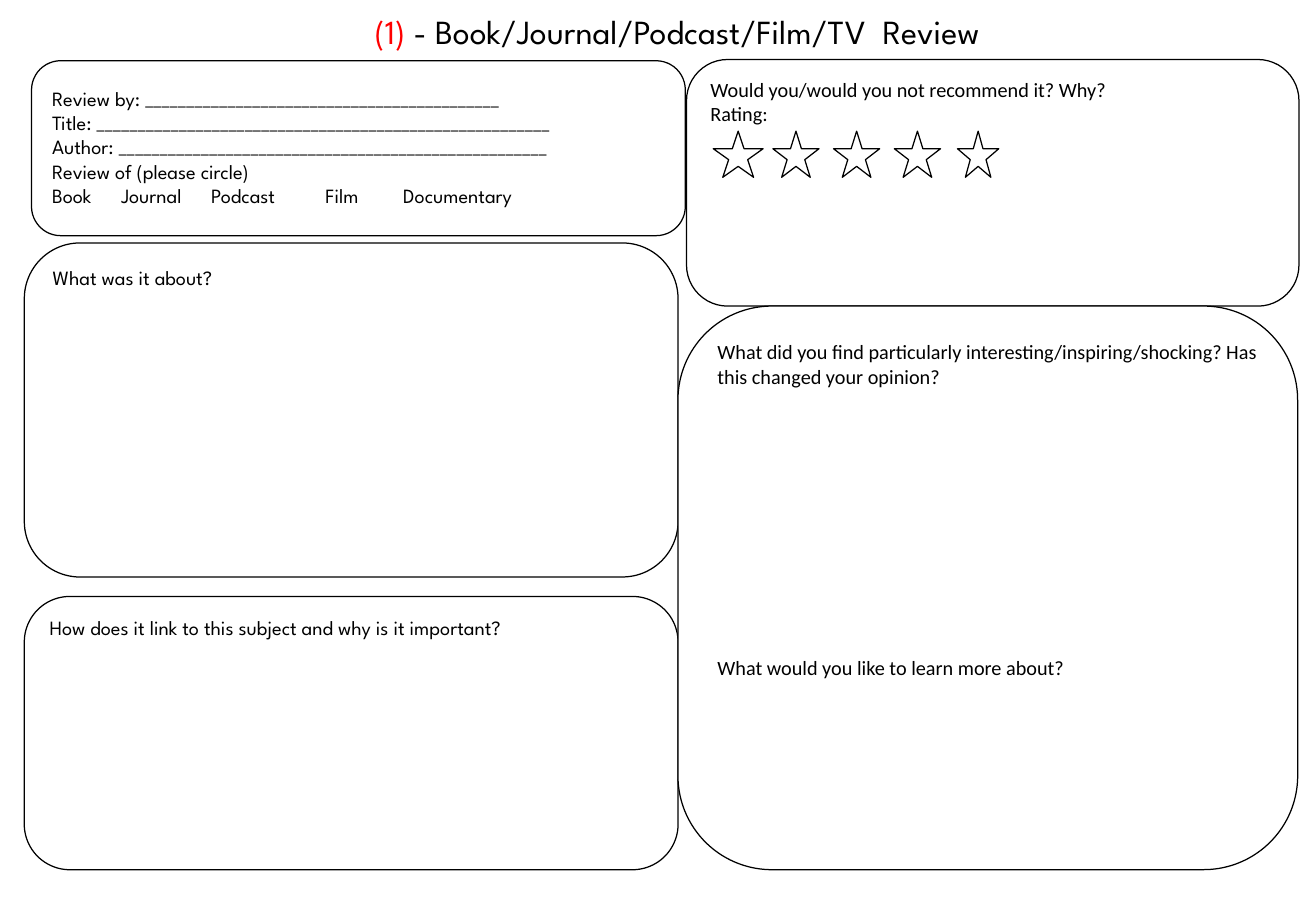
from lxml import etree
from pptx import Presentation
from pptx.dml.color import RGBColor
from pptx.enum.shapes import MSO_SHAPE
from pptx.enum.text import MSO_ANCHOR, MSO_AUTO_SIZE, PP_ALIGN
from pptx.oxml.ns import qn
from pptx.util import Inches, Pt

PANEL = MSO_SHAPE.FLOWCHART_ALTERNATE_PROCESS
STAR = MSO_SHAPE.STAR_5_POINT
TOP = MSO_ANCHOR.TOP
NO_AUTOFIT = MSO_AUTO_SIZE.NONE
LEFT, CENTER = PP_ALIGN.LEFT, PP_ALIGN.CENTER

COLORS = {"paper": "FFFFFF", "ink": "000000", "number": "FF0000"}
SPARTAN, CALIBRI = "League Spartan", "Calibri"
WIDTH, HEIGHT = Inches(10.83), Inches(7.5)

TITLE_BOX = (23.08, 0.53, 56.79, 5.33)
FORM_BOX = (3.05, 8.8, 48.48, 13.73)
FORM_OUTLINE = (2.4, 6.67, 49.68, 19.2)
FORM_LINES = [
    "Review by: " + "_" * 43,
    "Title: " + "_" * 55,
    "Author: " + "_" * 52,
    "Review of (please circle)",
    "Book\tJournal\tPodcast\tFilm\tDocumentary",
]
FORM_TABS = (0.57, 1.31, 2.25, 2.89)
PANELS = [
    ((52.17, 6.53, 46.54, 27.07), CALIBRI,
     ["Would you/would you not recommend it? Why?", "Rating:"], 0),
    ((1.85, 65.47, 49.68, 30), SPARTAN,
     ["How does it link to this subject and why is it important?"], 0),
    ((1.85, 26.67, 49.68, 36.67), SPARTAN, ["What was it about?"], 0),
    ((51.52, 33.6, 47.09, 61.87), CALIBRI,
     ["What did you find particularly interesting/inspiring/shocking? "
      "Has this changed your opinion?",
      "What would you like to learn more about?"], 158.5),
]
STARS = [(54.2, 3.79), (58.73, 3.51), (63.34, 3.51), (67.96, 3.51), (72.76, 3.14)]
STAR_TOP, STAR_HEIGHT = 14.4, 5.07


def color(name):
    return RGBColor.from_string(COLORS[name])


def to_lengths(percent_box):
    return [round(share * side / 100)
            for share, side in zip(percent_box, (WIDTH, HEIGHT, WIDTH, HEIGHT))]


def format_paragraph(paragraph, font_name, size, alignment):
    paragraph.alignment = alignment
    paragraph.font.name = font_name
    paragraph.font.size = Pt(size)
    paragraph.font.color.rgb = color("ink")


def write_lines(shape, lines, font_name, gap=0):
    frame = shape.text_frame
    frame.word_wrap = True
    frame.auto_size = NO_AUTOFIT
    frame.vertical_anchor = TOP
    frame.text = "\n".join(lines)
    for index, paragraph in enumerate(frame.paragraphs):
        format_paragraph(paragraph, font_name, 12, LEFT)
        paragraph.space_before = Pt(gap if index else 0)


def add_outlined_shape(slide, kind, box, filled=True):
    shape = slide.shapes.add_shape(kind, *to_lengths(box))
    shape.shadow.inherit = False
    if filled:
        shape.fill.solid()
        shape.fill.fore_color.rgb = color("paper")
    else:
        shape.fill.background()
    shape.line.color.rgb = color("ink")
    shape.line.width = Pt(0.75)
    return shape


def fill_title(title):
    title.left, title.top, title.width, title.height = to_lengths(TITLE_BOX)
    frame = title.text_frame
    frame.auto_size = NO_AUTOFIT
    frame.vertical_anchor = TOP
    paragraph = frame.paragraphs[0]
    format_paragraph(paragraph, SPARTAN, 20, CENTER)
    number = paragraph.add_run()
    number.text = "(1)"
    number.font.color.rgb = color("number")
    paragraph.add_run().text = " - Book/Journal/Podcast/Film/TV  Review"


def set_tabs(paragraph, positions):
    tabs = etree.Element(qn("a:tabLst"))
    for position in positions:
        etree.SubElement(tabs, qn("a:tab"), pos=str(Inches(position)), algn="l")
    paragraph._p.get_or_add_pPr().find(qn("a:defRPr")).addprevious(tabs)


def add_form(slide):
    form = slide.shapes.add_textbox(*to_lengths(FORM_BOX))
    write_lines(form, FORM_LINES, SPARTAN)
    set_tabs(form.text_frame.paragraphs[-1], FORM_TABS)
    add_outlined_shape(slide, PANEL, FORM_OUTLINE, filled=False)


def main():
    presentation = Presentation()
    presentation.slide_width, presentation.slide_height = WIDTH, HEIGHT
    slide = presentation.slides.add_slide(presentation.slide_layouts[5])
    fill_title(slide.shapes.title)
    for box, font_name, lines, gap in PANELS:
        panel = add_outlined_shape(slide, PANEL, box)
        write_lines(panel, lines, font_name, gap)
    add_form(slide)
    for left, width in STARS:
        add_outlined_shape(slide, STAR, (left, STAR_TOP, width, STAR_HEIGHT))
    presentation.save("out.pptx")


if __name__ == "__main__":
    main()
